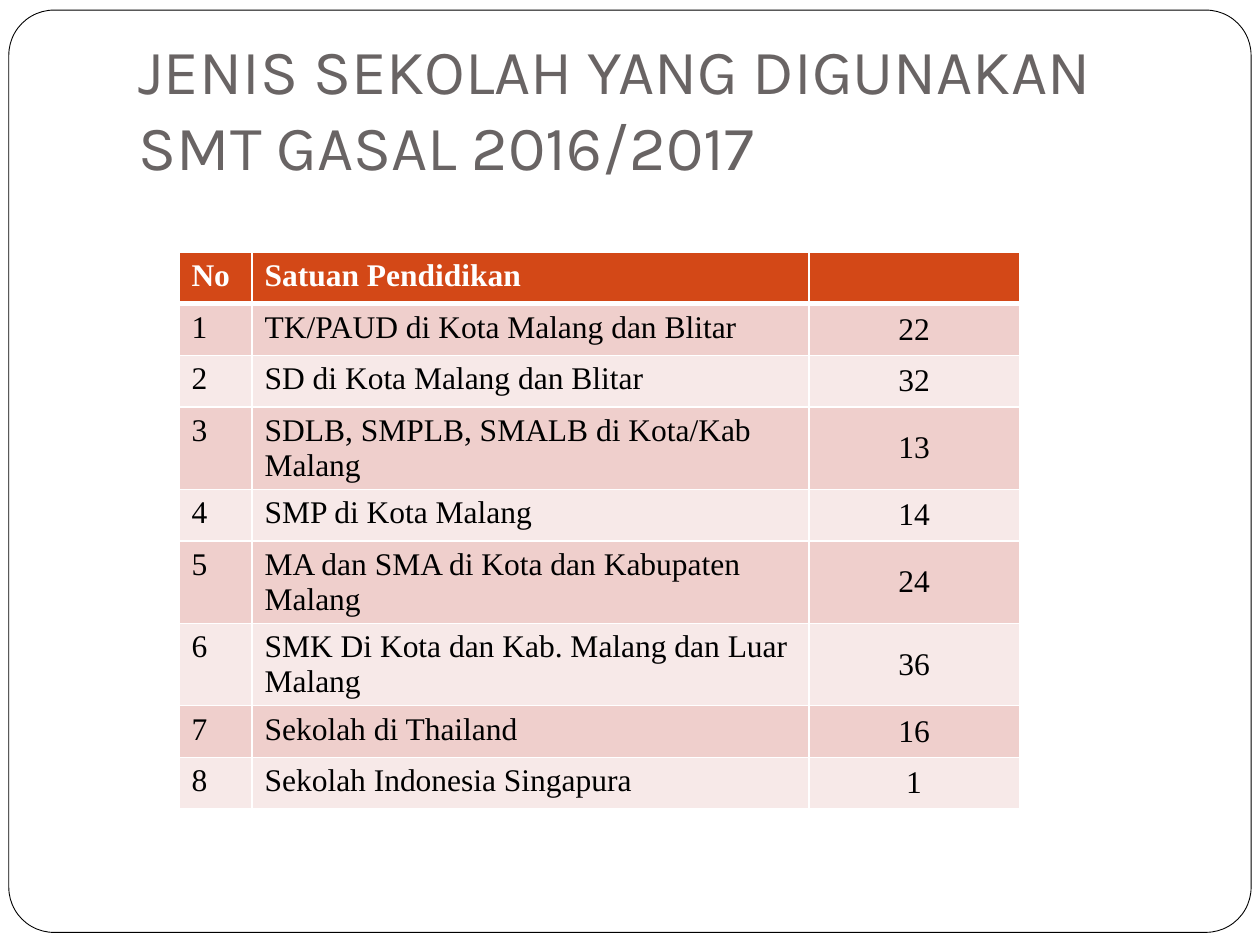
"""Build a slide with a table of school types used in a semester."""
from lxml import etree
from pptx import Presentation
from pptx.dml.color import RGBColor
from pptx.enum.shapes import MSO_SHAPE
from pptx.enum.text import MSO_ANCHOR, MSO_AUTO_SIZE, PP_ALIGN
from pptx.oxml.ns import qn
from pptx.util import Inches, Pt

ROUNDED = MSO_SHAPE.ROUNDED_RECTANGLE
TOP, MIDDLE, BOTTOM = MSO_ANCHOR.TOP, MSO_ANCHOR.MIDDLE, MSO_ANCHOR.BOTTOM
LEFT, CENTER = PP_ALIGN.LEFT, PP_ALIGN.CENTER
NO_AUTOFIT = MSO_AUTO_SIZE.NONE

WHITE = RGBColor(0xFF, 0xFF, 0xFF)
BLACK = RGBColor(0x00, 0x00, 0x00)
GRAY = RGBColor(0x69, 0x64, 0x64)
ORANGE = RGBColor(0xD3, 0x48, 0x17)
BANDS = (RGBColor(0xEF, 0xCF, 0xCC), RGBColor(0xF7, 0xE9, 0xE8))

TITLE = "JENIS SEKOLAH YANG DIGUNAKAN\vSMT GASAL 2016/2017"
HEADER = ("No", "Satuan Pendidikan", "")
SCHOOLS = (
    ("TK/PAUD di Kota Malang dan Blitar", 22),
    ("SD di Kota Malang dan Blitar", 32),
    ("SDLB, SMPLB, SMALB di Kota/Kab Malang", 13),
    ("SMP di Kota Malang", 14),
    ("MA dan SMA di Kota dan Kabupaten Malang", 24),
    ("SMK Di Kota dan Kab. Malang dan Luar Malang", 36),
    ("Sekolah di Thailand", 16),
    ("Sekolah Indonesia Singapura", 1),
)
COL_WIDTHS = (0.58, 4.42, 1.67)
ROW_HEIGHT = 0.41


def format_runs(p, font, size, color, bold=False):
    """Apply one font style to every run of a paragraph."""
    for r in p.runs:
        r.font.name = font
        r.font.size = Pt(size)
        r.font.bold = bold
        r.font.color.rgb = color


def add_frame(s):
    """Add the rounded border behind everything else."""
    sp = s.shapes.add_shape(ROUNDED, Inches(0.07), Inches(0.08), Inches(9.86), Inches(7.32))
    sp.adjustments[0] = 0.049
    sp.shadow.inherit = False
    sp.fill.solid()
    sp.fill.fore_color.rgb = WHITE
    sp.line.color.rgb = BLACK
    sp.line.width = Pt(0.5)
    s.shapes.title.element.addprevious(sp.element)


def set_title(s):
    """Place, fill and format the title placeholder."""
    sp = s.shapes.title
    sp.left, sp.top, sp.width, sp.height = Inches(1), Inches(0.3), Inches(8.5), Inches(1.25)
    tf = sp.text_frame
    tf.text = TITLE
    tf.word_wrap = True
    tf.auto_size = NO_AUTOFIT
    tf.vertical_anchor = BOTTOM
    tf.margin_left = tf.margin_right = tf.margin_bottom = Inches(0.1)
    tf.margin_top = Inches(0.05)
    p = tf.paragraphs[0]
    p.alignment = LEFT
    format_runs(p, "Karla", 36, GRAY)


def add_border(cell, side, width):
    """Draw one white border of a table cell."""
    tc_pr = cell._tc.get_or_add_tcPr()
    ln = etree.SubElement(tc_pr, qn(f"a:ln{side}"), w=str(Pt(width)))
    fill = etree.SubElement(ln, qn("a:solidFill"))
    etree.SubElement(fill, qn("a:srgbClr"), val=str(WHITE))


def fill_cell(cell, text, row, col):
    """Write and style a cell according to its row and column."""
    header = row == 0
    centered = col == 2 and not header
    for side in "LRTB":
        thick = (header and side == "B") or (row == 1 and side == "T")
        add_border(cell, side, 3 if thick else 1)
    cell.fill.solid()
    cell.fill.fore_color.rgb = ORANGE if header else BANDS[(row - 1) % 2]
    cell.vertical_anchor = MIDDLE if centered else TOP
    cell.text_frame.text = text
    p = cell.text_frame.paragraphs[0]
    p.alignment = CENTER if centered else LEFT
    format_runs(p, "Times New Roman", 18, WHITE if header else BLACK, header)


def add_school_table(s):
    """Add the table of numbered schools and their counts."""
    rows = [HEADER] + [(str(n), name, str(count)) for n, (name, count) in enumerate(SCHOOLS, 1)]
    table = s.shapes.add_table(
        len(rows), len(HEADER), Inches(1.42), Inches(2),
        Inches(sum(COL_WIDTHS)), Inches(ROW_HEIGHT * len(rows)),
    ).table
    for column, width in zip(table.columns, COL_WIDTHS):
        column.width = Inches(width)
    for i, texts in enumerate(rows):
        table.rows[i].height = Inches(ROW_HEIGHT)
        for j, text in enumerate(texts):
            fill_cell(table.cell(i, j), text, i, j)


def main():
    """Create and save the presentation."""
    prs = Presentation()
    prs.slide_width, prs.slide_height = Inches(10), Inches(7.5)
    s = prs.slides.add_slide(prs.slide_layouts[5])
    add_frame(s)
    set_title(s)
    add_school_table(s)
    prs.save("out.pptx")


if __name__ == "__main__":
    main()
